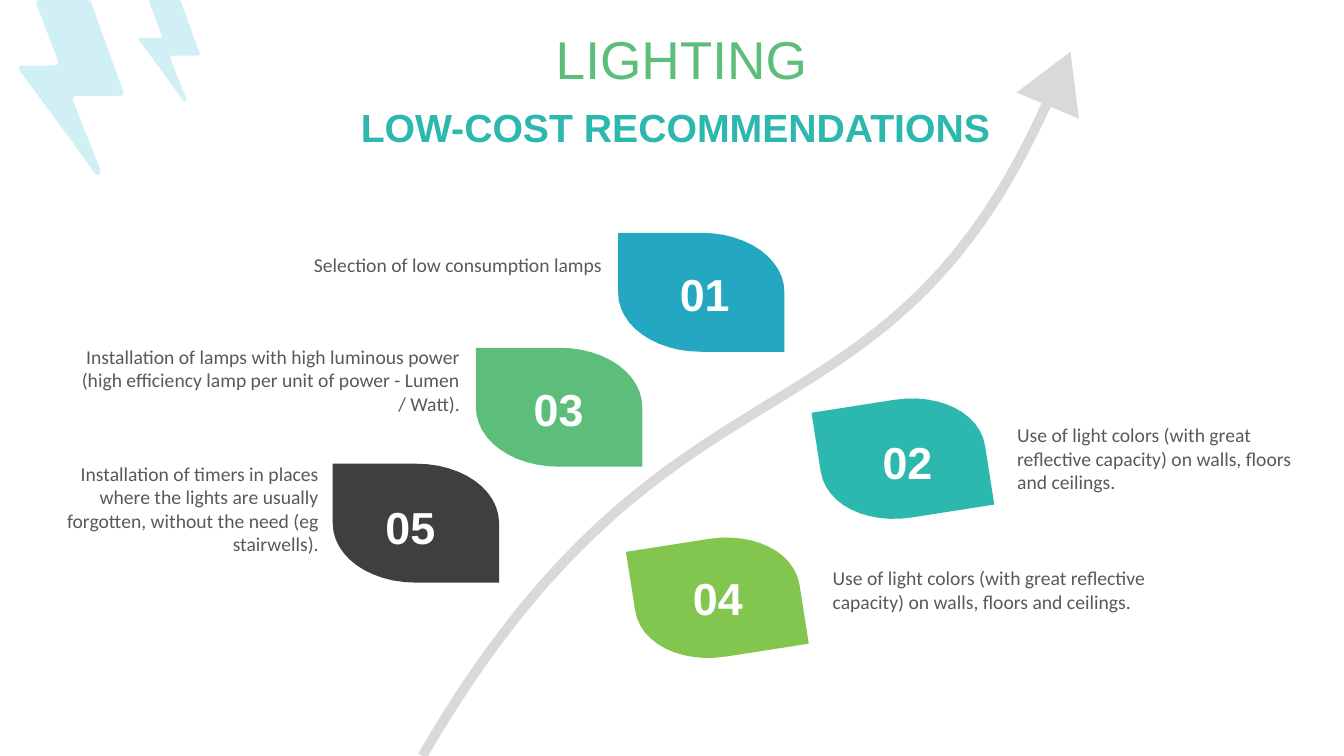
"""Build the slide of low-cost lighting recommendations along a rising arrow."""
import pptx
import pptx.dml.color
import pptx.enum.shapes
import pptx.enum.text
import pptx.util

Inches, Pt = pptx.util.Inches, pptx.util.Pt
RGB = pptx.dml.color.RGBColor
ALIGN = pptx.enum.text.PP_ALIGN
ANCHOR = pptx.enum.text.MSO_ANCHOR
AUTO = pptx.enum.text.MSO_AUTO_SIZE

WHITE = RGB(0xFF, 0xFF, 0xFF)
GREY = RGB(0x59, 0x59, 0x59)
SILVER = RGB(0xD9, 0xD9, 0xD9)
PALE = RGB(0xD0, 0xF0, 0xF6)
BLUE = RGB(0x24, 0xA8, 0xC2)
TEAL = RGB(0x2C, 0xB8, 0xAE)
GREEN = RGB(0x5C, 0xBE, 0x7A)
LIME = RGB(0x82, 0xC6, 0x50)
DARK = RGB(0x3F, 0x3F, 0x3F)

TITLE = {"name": "Arial", "size": Pt(38)}
SUBTITLE = {"name": "Arial", "size": Pt(28), "bold": True}
NUMBER = {"name": "Arial", "size": Pt(32), "bold": True}
BODY = {"name": "Calibri", "size": Pt(14)}

COLORS_TIP = "Use of light colors (with great reflective capacity) on walls, floors and ceilings."
TILT = -8.9
ITEMS = [
    ("04", LIME, (6.29, 5.34), TILT, (6.76, 5.61), COLORS_TIP,
     (8.16, 5.57, 3.52, 0.57), ALIGN.LEFT),
    ("02", TEAL, (8.13, 3.96), TILT, (8.64, 4.26), COLORS_TIP,
     (9.99, 4.15, 2.93, 0.81), ALIGN.LEFT),
    ("05", DARK, (3.3, 4.6), 0, (3.71, 4.9),
     "Installation of timers in places where the lights are usually forgotten, "
     "without the need (eg stairwells).", (0.22, 4.53, 3.04, 1.04), ALIGN.RIGHT),
    ("03", GREEN, (4.72, 3.45), 0, (5.18, 3.73),
     "Installation of lamps with high luminous power (high efficiency lamp per unit "
     "of power - Lumen / Watt).", (0.68, 3.37, 3.98, 0.81), ALIGN.RIGHT),
    ("01", BLUE, (6.13, 2.31), 0, (6.63, 2.59),
     "Selection of low consumption lamps", (1.61, 2.46, 4.46, 0.34), ALIGN.RIGHT),
]

LEAF_W, LEAF_H = 1.65, 1.18
LEAF = [
    (0, 0), (0.5, 0), (0.78, 0, 1, 0.22, 1, 0.5), (1, 1),
    (0.5, 1), (0.22, 1, 0, 0.78, 0, 0.5),
]
BOLT = [
    (0.22, 0), (0.66, 0), (0.69, 0, 0.71, 0.01, 0.72, 0.04), (1.03, 0.9),
    (1.05, 0.93, 1.03, 0.95, 0.99, 0.95), (0.59, 0.95),
    (0.53, 0.95, 0.52, 0.96, 0.54, 1.01), (0.8, 1.67),
    (0.81, 1.71, 0.81, 1.72, 0.79, 1.73), (0.77, 1.74, 0.76, 1.73, 0.75, 1.72),
    (0.53, 1.41), (0.02, 0.72), (0.01, 0.7, -0.01, 0.69, 0, 0.66),
    (0.02, 0.64, 0.04, 0.65, 0.05, 0.65), (0.34, 0.65),
    (0.39, 0.65, 0.4, 0.63, 0.38, 0.59), (0.18, 0.06),
    (0.16, 0.01, 0.17, 0, 0.22, 0),
]
BOLTS = [(0.19, 1), (1.38, 0.58)]
ARROW = [(4.19, 7.5), (6.65, 3.25, 8.77, 4.64, 10.39, 1.01)]
HEAD = (10.17, 0.49, 0.67, 0.58)


def trace(steps, n):
    """Turn points and Bezier steps into a list of points."""
    pts = []
    for step in steps:
        if len(step) == 2:
            pts.append(step)
            continue
        ctrl = [pts[-1], step[:2], step[2:4], step[4:]]
        for i in range(1, n + 1):
            t = i / n
            w = ((1 - t) ** 3, 3 * t * (1 - t) ** 2, 3 * t * t * (1 - t), t ** 3)
            pts.append(tuple(sum(a * c[k] for a, c in zip(w, ctrl)) for k in (0, 1)))
    return pts


def paint(sp, color):
    sp.shadow.inherit = False
    sp.fill.solid()
    sp.fill.fore_color.rgb = color
    sp.line.fill.background()


def add_outline(slide, steps, x=0, y=0, w=1, h=1, n=12, close=True):
    pts = [(Inches(x + w * a), Inches(y + h * b)) for a, b in trace(steps, n)]
    builder = slide.shapes.build_freeform(*pts[0])
    builder.add_line_segments(pts[1:], close=close)
    return builder.convert_to_shape()


def add_text(slide, text, box, font, color, align, anchor=ANCHOR.TOP, auto=AUTO.SHAPE_TO_FIT_TEXT):
    tf = slide.shapes.add_textbox(*map(Inches, box)).text_frame
    for key, value in {"word_wrap": True, "auto_size": auto, "vertical_anchor": anchor}.items():
        setattr(tf, key, value)
    p = tf.paragraphs[0]
    p.alignment = align
    r = p.add_run()
    r.text = text
    for key, value in font.items():
        setattr(r.font, key, value)
    r.font.color.rgb = color
    return p


def main():
    prs = pptx.Presentation()
    prs.slide_width, prs.slide_height = Inches(13.33), Inches(7.5)
    slide = prs.slides.add_slide(prs.slide_layouts[6])

    for x, scale in BOLTS:
        paint(add_outline(slide, BOLT, x, 0, scale, scale, 4), PALE)

    p = add_text(slide, "LIGHTING", (0.43, 0.22, 12.66, 0.79), TITLE, GREEN,
                 ALIGN.CENTER, ANCHOR.MIDDLE, AUTO.NONE)
    p.line_spacing = 0.9
    p.space_before = Pt(10)

    for _, color, (x, y), tilt, *_ in ITEMS:
        sp = add_outline(slide, LEAF, x, y, LEAF_W, LEAF_H)
        paint(sp, color)
        sp.rotation = tilt

    sp = add_outline(slide, ARROW, n=60, close=False)
    sp.shadow.inherit = False
    sp.fill.background()
    sp.line.color.rgb = SILVER
    sp.line.width = Pt(7)

    for number, _, _, _, spot, tip, box, align in ITEMS:
        add_text(slide, number, (*spot, 0.72, 0.64), NUMBER, WHITE, ALIGN.CENTER, ANCHOR.MIDDLE)
        add_text(slide, tip, box, BODY, GREY, align)

    triangle = pptx.enum.shapes.MSO_SHAPE.ISOSCELES_TRIANGLE
    sp = slide.shapes.add_shape(triangle, *map(Inches, HEAD))
    paint(sp, SILVER)
    sp.rotation = 22.9

    add_text(slide, "LOW-COST RECOMMENDATIONS", (3.48, 0.98, 6.56, 0.57), SUBTITLE, TEAL, ALIGN.LEFT)
    prs.save("out.pptx")


if __name__ == "__main__":
    main()
